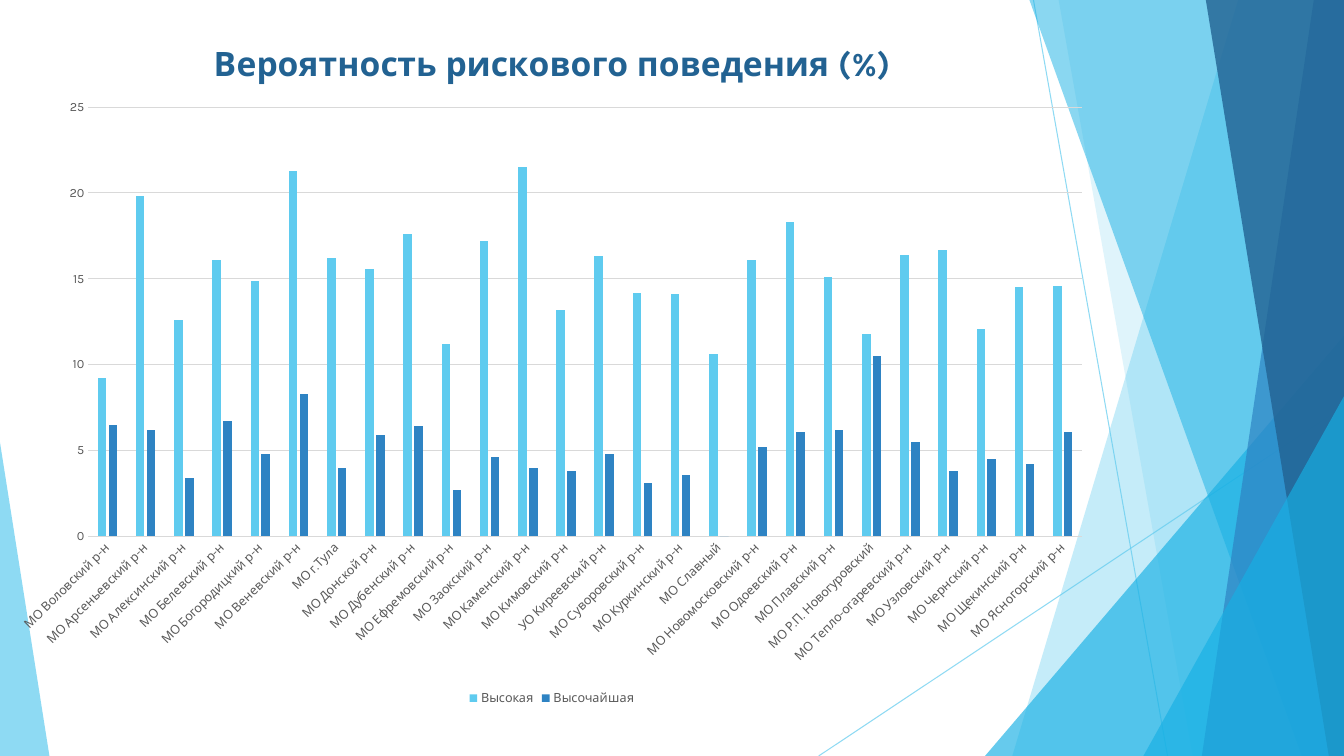
from dataclasses import dataclass

from lxml.etree import SubElement
from pptx import Presentation
from pptx.chart.data import CategoryChartData
from pptx.dml.color import RGBColor
from pptx.enum.chart import XL_CHART_TYPE, XL_LEGEND_POSITION, XL_TICK_MARK
from pptx.enum.shapes import MSO_CONNECTOR, MSO_SHAPE
from pptx.oxml import parse_xml
from pptx.oxml.ns import nsdecls, qn
from pptx.util import Inches, Pt


@dataclass(frozen=True)
class Theme:
    sky: str = "5FCBEF"
    cyan: str = "17B0E4"
    blue: str = "2E83C3"
    navy: str = "226292"
    grid: str = "D9D9D9"
    label: str = "595959"
    font: str = "Karla"
    title_size: float = 24
    label_size: float = 9
    line_width: float = 0.75


THEME = Theme()
WIDTH, HEIGHT = 13.33, 7.5

# district, high probability, very high probability
DISTRICTS = [
    ("МО Воловский р-н", 9.2, 6.5),
    ("МО Арсеньевский р-н", 19.8, 6.2),
    ("МО Алексинский р-н", 12.6, 3.4),
    ("МО Белевский р-н", 16.1, 6.7),
    ("МО Богородицкий р-н", 14.9, 4.8),
    ("МО Веневский р-н", 21.3, 8.3),
    ("МО г.Тула", 16.2, 4),
    ("МО Донской р-н", 15.6, 5.9),
    ("МО Дубенский р-н", 17.6, 6.4),
    ("МО Ефремовский р-н", 11.2, 2.7),
    ("МО Заокский р-н", 17.2, 4.6),
    ("МО Каменский р-н", 21.5, 4),
    ("МО Кимовский р-н", 13.2, 3.8),
    ("УО Киреевский р-н", 16.3, 4.8),
    ("МО Суворовский р-н", 14.2, 3.1),
    ("МО Куркинский р-н", 14.1, 3.6),
    ("МО Славный", 10.6, 0),
    ("МО Новомосковский р-н", 16.1, 5.2),
    ("МО Одоевский р-н", 18.3, 6.1),
    ("МО Плавский р-н", 15.1, 6.2),
    ("МО Р.П. Новогуровский", 11.8, 10.5),
    ("МО Тепло-огаревский р-н", 16.4, 5.5),
    ("МО Узловский р-н", 16.7, 3.8),
    ("МО Чернский р-н", 12.1, 4.5),
    ("МО Щекинский р-н", 14.5, 4.2),
    ("МО Ясногорский р-н", 14.6, 6.1),
]


def set_alpha(element, percent):
    color = element.find(".//" + qn("a:srgbClr"))
    SubElement(color, qn("a:alpha"), val=str(percent * 1000))


def paint(sp, color, alpha):
    sp.shadow.inherit = False
    sp.fill.solid()
    sp.fill.fore_color.rgb = RGBColor.from_string(color)
    set_alpha(sp.fill._xPr, alpha)
    sp.line.fill.background()


def add_ray(shapes, x1, y1, x2, y2):
    line = shapes.add_connector(MSO_CONNECTOR.STRAIGHT, *map(Inches, (x1, y1, x2, y2)))
    line.line.color.rgb = RGBColor.from_string(THEME.sky)
    line.line.width = Pt(THEME.line_width)
    sp_pr = line._element.spPr
    set_alpha(sp_pr, 70)
    SubElement(sp_pr, qn("a:effectLst"))


def add_facet(shapes, box, top_x, bottom_x, color, alpha):
    """Fill the box to the right of a slanted edge running from top_x to bottom_x."""
    x, y, w, h = box
    right, bottom = x + w, y + h
    builder = shapes.build_freeform(Inches(x + top_x), Inches(y))
    builder.add_line_segments([
        (Inches(right), Inches(y)),
        (Inches(right), Inches(bottom)),
        (Inches(x + bottom_x), Inches(bottom)),
    ])
    paint(builder.convert_to_shape(), color, alpha)


def add_corner(shapes, x, bottom, w, h, apex, color, alpha):
    """Right triangle standing on bottom, with its apex at 0 (left) or 1 (right)."""
    sp = shapes.add_shape(MSO_SHAPE.ISOSCELES_TRIANGLE,
                          *map(Inches, (x, bottom - h, w, h)))
    sp.adjustments[0] = apex
    paint(sp, color, alpha)


def add_backdrop(shapes, box):
    x, y, w, h = box
    right, bottom = x + w, y + h
    add_ray(shapes, x + 0.48, y, x + 1.81, bottom)
    add_ray(shapes, right, y + 4.03, x - 1.65, bottom)
    add_facet(shapes, box, 2.51, 0.27, THEME.sky, 36)
    add_facet(shapes, box, 0.73, 2.06, THEME.sky, 20)
    add_corner(shapes, right - 3.56, bottom, 3.56, 4.17, 1, THEME.cyan, 66)
    add_facet(shapes, box, 0.44, 3.14, THEME.cyan, 50)
    add_facet(shapes, box, 3.26, 2.15, THEME.blue, 70)
    add_facet(shapes, box, 2.19, 3.41, THEME.navy, 80)
    add_corner(shapes, right - 1.99, bottom, 1.99, 3.57, 1, THEME.cyan, 66)
    add_corner(shapes, 0, bottom, 0.49, 3.11, 0, THEME.sky, 70)


def set_font(font, size, color, bold=False):
    font.name = THEME.font
    font.size = Pt(size)
    font.bold = bold
    font.color.rgb = RGBColor.from_string(color)


def set_line(line, color):
    line.color.rgb = RGBColor.from_string(color)
    line.width = Pt(THEME.line_width)


def set_plot_layout(chart, x, y, w, h):
    """Fix the inner plot area, in fractions of the chart frame."""
    area = chart._chartSpace.chart.plotArea
    for old in area.findall(qn("c:layout")):
        area.remove(old)
    area.insert(0, parse_xml(
        f'<c:layout {nsdecls("c")}><c:manualLayout><c:layoutTarget val="inner"/>'
        '<c:xMode val="edge"/><c:yMode val="edge"/>'
        f'<c:x val="{x}"/><c:y val="{y}"/><c:w val="{w}"/><c:h val="{h}"/>'
        '</c:manualLayout></c:layout>'))


def style_axes(chart):
    cat, val = chart.category_axis, chart.value_axis
    for axis in (cat, val):
        axis.major_tick_mark = axis.minor_tick_mark = XL_TICK_MARK.NONE
        set_font(axis.tick_labels.font, THEME.label_size, THEME.label)
    set_line(cat.format.line, THEME.grid)
    cat._element.find(qn("c:txPr")).find(qn("a:bodyPr")).set("rot", "-2700000")
    val.minimum_scale, val.maximum_scale, val.major_unit = 0, 25, 5
    val.format.line.fill.background()
    set_line(val.major_gridlines.format.line, THEME.grid)


def add_risk_chart(shapes, box):
    names, high, highest = zip(*DISTRICTS)
    data = CategoryChartData()
    data.categories = names
    data.add_series("Высокая", high)
    data.add_series("Высочайшая", highest)
    chart = shapes.add_chart(XL_CHART_TYPE.COLUMN_CLUSTERED,
                             *map(Inches, box), data).chart
    chart.font.name, chart.font.size = THEME.font, Pt(10)

    chart.has_title = True
    p = chart.chart_title.text_frame.paragraphs[0]
    p.text = "Вероятность рискового поведения (%)"
    set_font(p.font, THEME.title_size, THEME.navy, bold=True)
    set_font(p.runs[0].font, THEME.title_size, THEME.navy, bold=True)
    chart.chart_title.include_in_layout = False

    chart.has_legend = True
    chart.legend.position = XL_LEGEND_POSITION.BOTTOM
    chart.legend.include_in_layout = False
    set_font(chart.legend.font, THEME.label_size, THEME.label)

    plot = chart.plots[0]
    plot.gap_width, plot.overlap, plot.vary_by_categories = 219, -27, False
    for series, color in zip(plot.series, (THEME.sky, THEME.blue)):
        series.format.fill.solid()
        series.format.fill.fore_color.rgb = RGBColor.from_string(color)
    style_axes(chart)
    set_plot_layout(chart, 0.08, 0.13, 0.9, 0.62)


def main():
    prs = Presentation()
    prs.slide_width, prs.slide_height = Inches(WIDTH), Inches(HEIGHT)
    s = prs.slides.add_slide(prs.slide_layouts[6])
    add_backdrop(s.shapes, (9.77, 0, WIDTH - 9.77, HEIGHT))
    add_risk_chart(s.shapes, (0, 0.17, 10.95, 6.87))
    prs.save("out.pptx")


if __name__ == "__main__":
    main()
